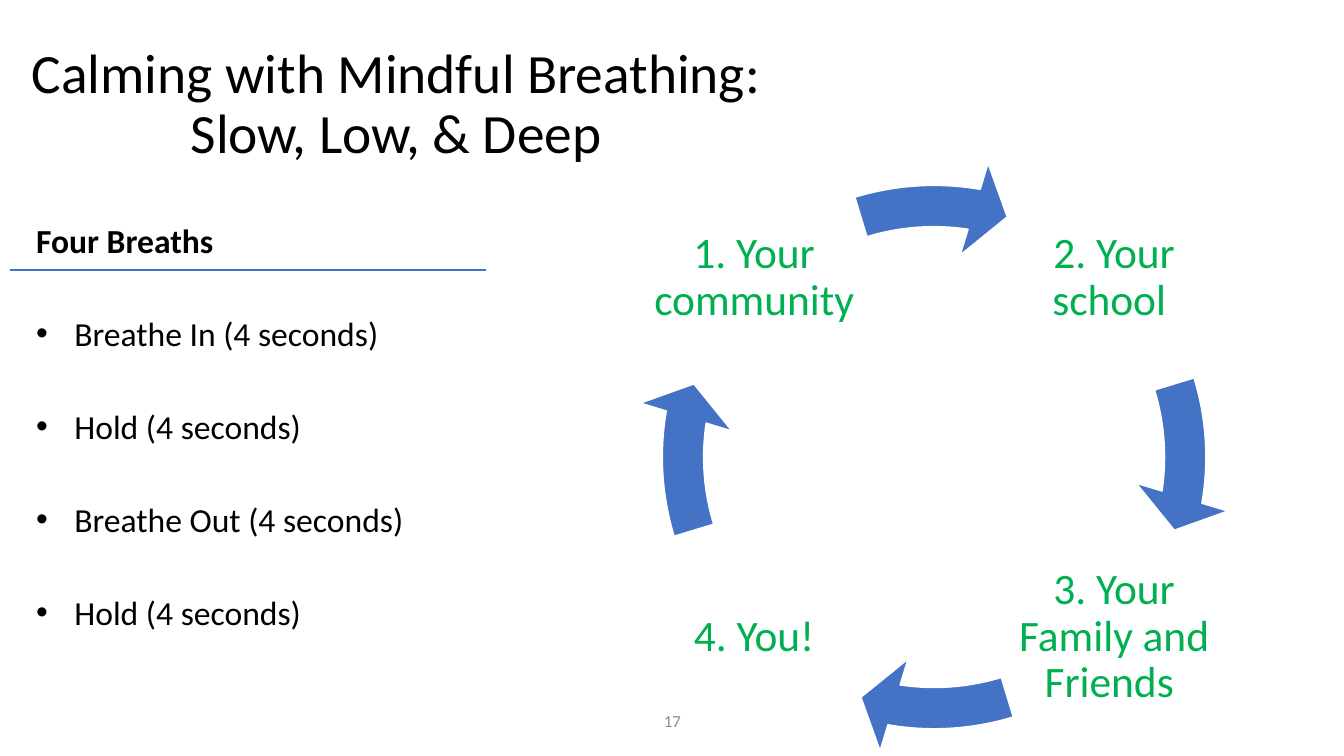
from lxml import etree
from pptx import Presentation
from pptx.dml.color import RGBColor
from pptx.enum.shapes import MSO_CONNECTOR, MSO_SHAPE
from pptx.enum.text import MSO_ANCHOR, MSO_AUTO_SIZE, PP_ALIGN
from pptx.oxml.ns import qn
from pptx.util import Inches, Pt

LINE = MSO_CONNECTOR.STRAIGHT
ARROW = MSO_SHAPE.CIRCULAR_ARROW
MIDDLE = MSO_ANCHOR.MIDDLE
TOP = MSO_ANCHOR.TOP
CENTER = PP_ALIGN.CENTER
LEFT = PP_ALIGN.LEFT
FIXED = MSO_AUTO_SIZE.NONE

WIDE, HIGH = 13.33, 7.5
FONT = "Calibri"
COLORS = {"ink": "000000", "blue": "4472C4", "green": "00B050",
          "gray": "8C8C8C", "white": "FFFFFF"}
STEPS = ["Breathe In (4 seconds)", "Hold (4 seconds)",
         "Breathe Out (4 seconds)", "Hold (4 seconds)"]
STOPS = [("2. Your school ", 1, 0), ("3. Your Family and Friends ", 1, 1),
         ("4. You!", 0, 1), ("1. Your community", 0, 0)]


def color(name):
    """Return the named colour."""
    return RGBColor.from_string(COLORS[name])


def style(para, size, tint="ink", bold=False, align=CENTER, space=None):
    """Format a paragraph and its runs."""
    para.alignment = align
    para.line_spacing = space
    for run in para.runs:
        run.font.name = FONT
        run.font.size = Pt(size)
        run.font.bold = bold
        run.font.color.rgb = color(tint)


def add_text(slide, box, text, anchor=MIDDLE):
    """Add a wrapped text box and return its frame."""
    frame = slide.shapes.add_textbox(*map(Inches, box)).text_frame
    frame.word_wrap = True
    frame.vertical_anchor = anchor
    frame.text = text
    return frame


def add_title(slide, box):
    """Place the heading of the slide."""
    title = slide.shapes.title
    title.left, title.top, title.width, title.height = map(Inches, box)
    frame = title.text_frame
    frame.text = "Calming with Mindful Breathing:\vSlow, Low, & Deep"
    frame.auto_size = FIXED
    frame.vertical_anchor = MIDDLE
    style(frame.paragraphs[0], 39.6, space=0.9)


def add_list(slide, box):
    """Place the underlined heading and the breathing steps."""
    left, top, _, _ = box
    frame = add_text(slide, box, "\n".join(["Four Breaths"] + STEPS), TOP)
    head, *items = frame.paragraphs
    style(head, 24, bold=True, align=LEFT, space=0.8)
    head.space_before = Pt(10)
    for item in items:
        style(item, 24, align=LEFT, space=0.8)
        item.space_before = Pt(43.4)
        props = item._p.get_or_add_pPr()
        props.set("marL", str(Inches(0.38)))
        props.set("indent", str(Inches(-0.38)))
        etree.SubElement(props, qn("a:buFont"), typeface="Arial")
        etree.SubElement(props, qn("a:buChar"), char="•")
    ends = (left - 0.16, top + 0.47, left + 4.56, top + 0.47)
    rule = slide.shapes.add_connector(LINE, *map(Inches, ends))
    rule.line.color.rgb = color("blue")
    rule.line.width = Pt(1)
    etree.SubElement(rule._element.spPr, qn("a:effectLst"))


def add_cycle(slide, box):
    """Place four labels in a square, joined by a ring of arrows."""
    left, top, _, _ = box
    for turn, (text, col, row) in enumerate(STOPS):
        spot = (left + 0.13 + 3.57 * col, top + 0.14 + 3.56 * row, 2.1, 2.1)
        frame = add_text(slide, spot, text)
        frame.margin_left = frame.margin_right = Inches(0.04)
        frame.margin_top = frame.margin_bottom = Inches(0.04)
        style(frame.paragraphs[0], 31, "green", space=0.9)
        arrow = slide.shapes.add_shape(ARROW, *map(Inches, box))
        arrow.shadow.inherit = False
        arrow.fill.solid()
        arrow.fill.fore_color.rgb = color("blue")
        arrow.line.color.rgb = color("white")
        arrow.line.width = Pt(1)
        angle = 54 * turn
        shape = (0.069, 4.65, 5.51 + angle, (205.84 + angle) % 216, 0.08)
        for place, value in enumerate(shape):
            arrow.adjustments[place] = value


def add_number(slide, box):
    """Place the page number."""
    frame = add_text(slide, box, "17")
    style(frame.paragraphs[0], 12, "gray")


def main():
    """Build and save the slide."""
    deck = Presentation()
    deck.slide_width, deck.slide_height = Inches(WIDE), Inches(HIGH)
    slide = deck.slides.add_slide(deck.slide_layouts[5])
    add_title(slide, (0, 0.61, 7.86, 0.87))
    add_list(slide, (0.26, 2.21, 5.8, 4.1))
    add_number(slide, (4.42, 6.95, 4.5, 0.4))
    add_cycle(slide, (6.3, 1.57, 5.93, 5.93))
    deck.save("out.pptx")


if __name__ == "__main__":
    main()
